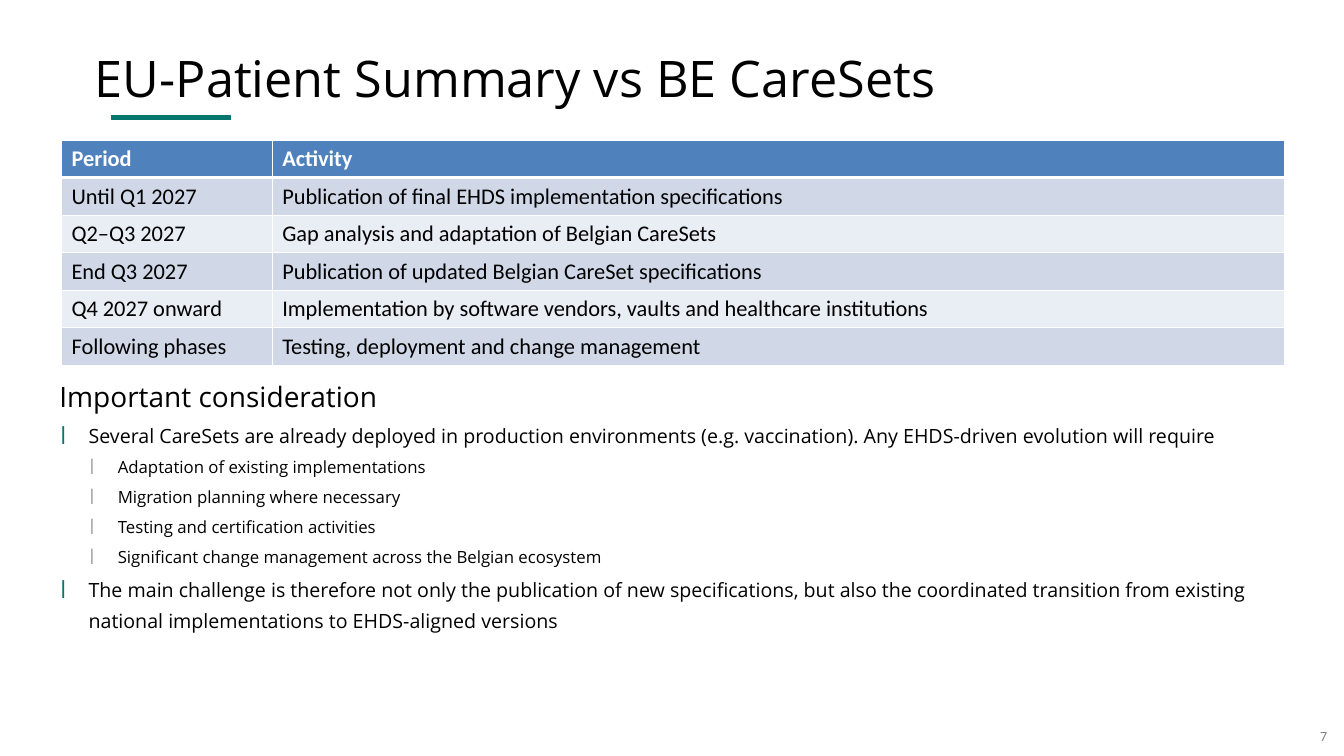
from dataclasses import dataclass

from lxml import etree
from pptx import Presentation
from pptx.dml.color import RGBColor
from pptx.enum.shapes import MSO_SHAPE as Preset
from pptx.enum.text import MSO_ANCHOR as Anchor, PP_ALIGN as Align
from pptx.oxml.ns import qn
from pptx.util import Inches, Pt


@dataclass(frozen=True)
class Theme:
    heading_font: str = "Open Sans"
    table_font: str = "Calibri"
    black: str = "000000"
    white: str = "FFFFFF"
    teal: str = "07766F"
    bullet_gray: str = "A6A6A6"
    number_gray: str = "808080"
    header_blue: str = "4F81BD"
    bands: tuple = ("D0D8E8", "E9EDF4")
    title_size: int = 36
    heading_size: int = 20
    table_size: int = 16
    point_size: int = 14
    detail_size: int = 12
    number_size: int = 10


theme = Theme()


def add_span(para, text, size, color, font_name=theme.heading_font, bold=False):
    span = para.add_run()
    span.text = text
    span.font.size = Pt(size)
    span.font.name = font_name
    span.font.bold = bold
    span.font.color.rgb = RGBColor.from_string(color)


def add_child(parent, tag, **attributes):
    child = etree.SubElement(parent, qn(tag))
    for name, value in attributes.items():
        child.set(name, str(value))
    return child


deck = Presentation()
deck.slide_width, deck.slide_height = Inches(13.33), Inches(7.5)
page = deck.slides.add_slide(deck.slide_layouts[5])

# Title and accent bar
title = page.shapes.title
title.left, title.top = Inches(0.84), Inches(0.11)
title.width, title.height = Inches(11.89), Inches(0.96)
frame = title.text_frame
frame.vertical_anchor = Anchor.BOTTOM
frame.margin_bottom = 0
para = frame.paragraphs[0]
para.alignment = Align.LEFT
add_span(para, "EU-Patient Summary vs BE CareSets", theme.title_size, theme.black)

accent = page.shapes.add_shape(
    Preset.RECTANGLE, Inches(1.11), Inches(1.15), Inches(1.18), Inches(0.04))
accent.shadow.inherit = False
accent.fill.solid()
accent.fill.fore_color.rgb = RGBColor.from_string(theme.teal)
accent.line.color.rgb = RGBColor.from_string(theme.teal)
accent.line.width = Pt(0.75)

# Timeline table
timeline = [
    ("Period", "Activity"),
    ("Until Q1 2027", "Publication of final EHDS implementation specifications"),
    ("Q2–Q3 2027", "Gap analysis and adaptation of Belgian CareSets"),
    ("End Q3 2027", "Publication of updated Belgian CareSet specifications"),
    ("Q4 2027 onward",
     "Implementation by software vendors, vaults and healthcare institutions"),
    ("Following phases", "Testing, deployment and change management"),
]
table = page.shapes.add_table(
    len(timeline), 2, Inches(0.61), Inches(1.39), Inches(12.13), Inches(2.22)).table
table.columns[0].width, table.columns[1].width = Inches(2.09), Inches(10.04)

for row_index, texts in enumerate(timeline):
    is_header = row_index == 0
    table.rows[row_index].height = Inches(0.37)
    fill = theme.header_blue if is_header else theme.bands[(row_index - 1) % 2]
    for column_index, text in enumerate(texts):
        cell = table.cell(row_index, column_index)
        cell.vertical_anchor = Anchor.MIDDLE
        add_span(cell.text_frame.paragraphs[0], text, theme.table_size,
                 theme.white if is_header else theme.black,
                 theme.table_font, is_header)
        properties = cell._tc.get_or_add_tcPr()
        for side in "LRTB":
            thick = (is_header and side == "B") or (row_index == 1 and side == "T")
            border = add_child(properties, f"a:ln{side}", w=Pt(3 if thick else 1))
            add_child(add_child(border, "a:solidFill"), "a:srgbClr", val=theme.white)
        cell.fill.solid()
        cell.fill.fore_color.rgb = RGBColor.from_string(fill)

# Considerations: level 0 is the heading, 1 a point, 2 a detail
considerations = [
    (0, "Important consideration"),
    (1, "Several CareSets are already deployed in production environments "
        "(e.g. vaccination). Any EHDS-driven evolution will require"),
    (2, "Adaptation of existing implementations"),
    (2, "Migration planning where necessary"),
    (2, "Testing and certification activities"),
    (2, "Significant change management across the Belgian ecosystem"),
    (1, "The main challenge is therefore not only the publication of new "
        "specifications, but also the coordinated transition from existing "
        "national implementations to EHDS-aligned versions"),
]
sizes = (theme.heading_size, theme.point_size, theme.detail_size)
bullet_colors = (None, theme.teal, theme.bullet_gray)
hanging = Inches(0.29)

box = page.shapes.add_textbox(Inches(0.29), Inches(3.61), Inches(12.44), Inches(3.29))
frame = box.text_frame
frame.word_wrap = True
for index, (level, text) in enumerate(considerations):
    para = frame.paragraphs[0] if index == 0 else frame.add_paragraph()
    para.level = max(level - 1, 0)
    para.line_spacing = 1.31
    para.space_before = Pt(0.2 * sizes[level] if index else 0)
    properties = para._p.get_or_add_pPr()
    properties.set("marL", str(Inches(0.2) + level * hanging))
    properties.set("indent", str(-hanging if level else 0))
    if level:
        add_child(add_child(properties, "a:buClr"), "a:srgbClr",
                  val=bullet_colors[level])
        add_child(properties, "a:buSzPct", val=120000)
        add_child(properties, "a:buFont", typeface=theme.heading_font)
        add_child(properties, "a:buChar", char="ǀ")
    add_span(para, text, sizes[level], theme.black)

# Page number
number_box = page.shapes.add_textbox(
    Inches(12.17), Inches(7.1), Inches(1.09), Inches(0.4))
frame = number_box.text_frame
frame.word_wrap = True
frame.vertical_anchor = Anchor.MIDDLE
para = frame.paragraphs[0]
para.alignment = Align.RIGHT
add_span(para, "7", theme.number_size, theme.number_gray, theme.table_font)

deck.save("out.pptx")
